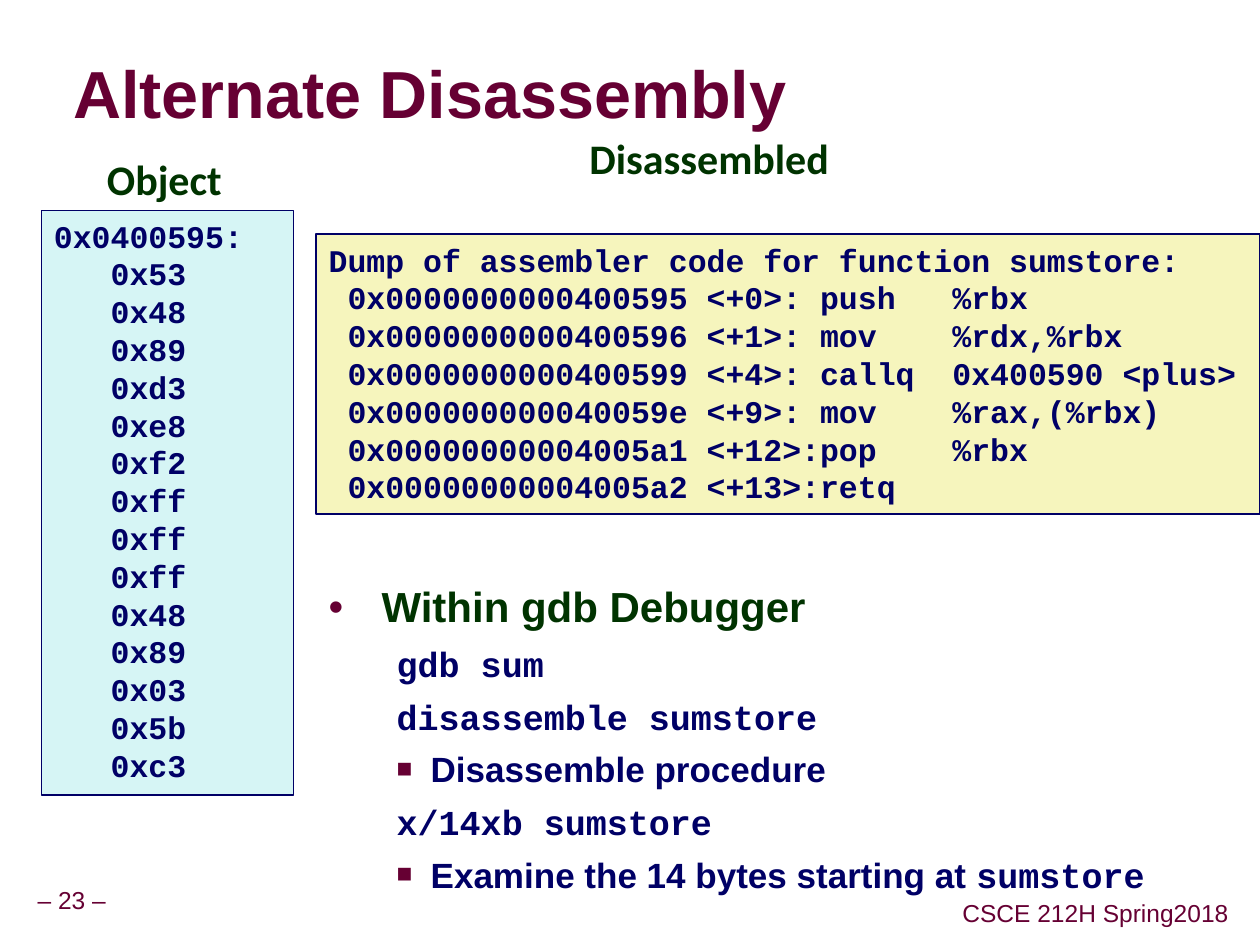
"""Build the slide on alternate disassembly with gdb."""
from lxml import etree
from pptx import Presentation
from pptx import util as u
from pptx.dml.color import RGBColor
from pptx.enum import shapes, text
from pptx.oxml import ns

MAROON = RGBColor(0x66, 0x00, 0x33)
GREEN = RGBColor(0x00, 0x33, 0x00)
NAVY = RGBColor(0x00, 0x00, 0x66)
CREAM = RGBColor(0xF6, 0xF5, 0xBD)
AQUA = RGBColor(0xD6, 0xF5, 0xF5)
SANS, HEAD, MONO = "Arial", "Calibri", "Courier New"

OBJECT_BYTES = "53 48 89 d3 e8 f2 ff ff ff 48 89 03 5b c3".split()
DISASSEMBLY = [
    "Dump of assembler code for function sumstore:",
    " 0x0000000000400595 <+0>: push   %rbx",
    " 0x0000000000400596 <+1>: mov    %rdx,%rbx",
    " 0x0000000000400599 <+4>: callq  0x400590 <plus>",
    " 0x000000000040059e <+9>: mov    %rax,(%rbx)",
    " 0x00000000004005a1 <+12>:pop    %rbx",
    " 0x00000000004005a2 <+13>:retq",
]
DEBUGGER_STEPS = [
    (False, [("gdb sum", MONO)]),
    (False, [("disassemble sumstore", MONO)]),
    (True, [("Disassemble procedure", SANS)]),
    (False, [("x/14xb sumstore", MONO)]),
    (True, [("Examine the 14 bytes starting at ", SANS), ("sumstore", MONO)]),
]


def apply(target, values):
    for name, value in values.items():
        setattr(target, name, value)


class SlideBuilder:
    def __init__(self, deck):
        self.page = deck.slides.add_slide(deck.slide_layouts[5])

    def frame(self, box, inset=(0.1, 0.05), **values):
        side, edge = (u.Inches(size) for size in inset)
        apply(box.text_frame, {
            "margin_left": side, "margin_right": side,
            "margin_top": edge, "margin_bottom": edge,
            "word_wrap": True, "auto_size": text.MSO_AUTO_SIZE.NONE,
            "vertical_anchor": text.MSO_ANCHOR.TOP, **values})
        return box.text_frame

    def text_box(self, place, **values):
        box = self.page.shapes.add_textbox(*map(u.Inches, place))
        return self.frame(box, **values)

    def span(self, para, words, font, size, color, bold=True):
        span = para.add_run()
        span.text = words
        apply(span.font, {"name": font, "size": u.Pt(size), "bold": bold})
        span.font.color.rgb = color
        return span

    def indent(self, para, left, hanging, bullet=None, scale=100):
        props = para._p.get_or_add_pPr()
        props.set("marL", str(u.Inches(left)))
        props.set("indent", str(u.Inches(-hanging)))
        if bullet:
            color = etree.SubElement(props, ns.qn("a:buClr"))
            etree.SubElement(color, ns.qn("a:srgbClr"), val=str(MAROON))
            etree.SubElement(props, ns.qn("a:buSzPct"), val=str(scale * 1000))
            etree.SubElement(props, ns.qn("a:buFont"), typeface=SANS)
            etree.SubElement(props, ns.qn("a:buChar"), char=bullet)
        else:
            etree.SubElement(props, ns.qn("a:buNone"))

    def title(self, words, place):
        box = self.page.shapes.title
        sides = ("left", "top", "width", "height")
        apply(box, dict(zip(sides, map(u.Inches, place))))
        frame = self.frame(box, (0, 0), vertical_anchor=text.MSO_ANCHOR.MIDDLE)
        para = frame.paragraphs[0]
        apply(para, {"alignment": text.PP_ALIGN.LEFT, "line_spacing": 0.87})
        span = self.span(para, words, SANS, 38, MAROON)
        effects = etree.Element(ns.qn("a:effectLst"))
        shadow = etree.SubElement(effects, ns.qn("a:outerShdw"),
                                  dist="50800", dir="2700000")
        etree.SubElement(shadow, ns.qn("a:srgbClr"), val="969696")
        span.font._element.find(ns.qn("a:solidFill")).addnext(effects)

    def heading(self, words, place):
        para = self.text_box(place).paragraphs[0]
        self.span(para, words, HEAD, 24, GREEN)

    def code_panel(self, lines, place, fill):
        box = self.page.shapes.add_shape(
            shapes.MSO_SHAPE.RECTANGLE, *map(u.Inches, place))
        box.shadow.inherit = False
        box.fill.solid()
        box.fill.fore_color.rgb = fill
        box.line.color.rgb = NAVY
        box.line.width = u.Pt(1)
        frame = self.frame(box)
        for number, line in enumerate(lines):
            para = frame.add_paragraph() if number else frame.paragraphs[0]
            para.alignment = text.PP_ALIGN.LEFT
            self.span(para, line, MONO, 18, NAVY)

    def debugger_notes(self, topic, steps, place):
        frame = self.text_box(place)
        para = frame.paragraphs[0]
        self.indent(para, 0.42, 0.42, "•")
        para.line_spacing = 0.95
        self.span(para, topic, SANS, 24, GREEN)
        for bulleted, pieces in steps:
            para = frame.add_paragraph()
            self.indent(para, 0.81, 0.27, "■" if bulleted else None, 75)
            apply(para, {"level": 1, "space_before": u.Pt(6)})
            for words, font in pieces:
                self.span(para, words, font, 20, NAVY)

    def footer(self, words, place):
        frame = self.text_box(place, inset=(0.05, 0.05), word_wrap=False,
                              vertical_anchor=text.MSO_ANCHOR.MIDDLE)
        para = frame.paragraphs[0]
        apply(para, {"alignment": text.PP_ALIGN.CENTER, "line_spacing": 0.9})
        self.span(para, words, SANS, 14, MAROON, bold=False)


def main():
    deck = Presentation()
    apply(deck, {"slide_width": u.Inches(10), "slide_height": u.Inches(7.5)})
    slide = SlideBuilder(deck)
    slide.footer("– 23 –", (0.24, 7, 0.66, 0.31))
    slide.footer("CSCE 212H Spring2018", (7.58, 7.1, 2.23, 0.31))
    slide.title("Alternate Disassembly", (0.58, 0.46, 6.83, 0.63))
    slide.heading("Disassembled", (4.58, 1, 2.85, 0.45))
    slide.code_panel(DISASSEMBLY, (2.51, 1.86, 7.49, 2.22), CREAM)
    slide.debugger_notes("Within gdb Debugger", DEBUGGER_STEPS,
                         (2.51, 4.59, 6.89, 2.46))
    slide.heading("Object", (0.75, 1.17, 1.43, 0.45))
    object_lines = ["0x0400595:"] + [f"   0x{byte}" for byte in OBJECT_BYTES]
    slide.code_panel(object_lines, (0.33, 1.67, 2, 4.64), AQUA)
    deck.save("out.pptx")


if __name__ == "__main__":
    main()
